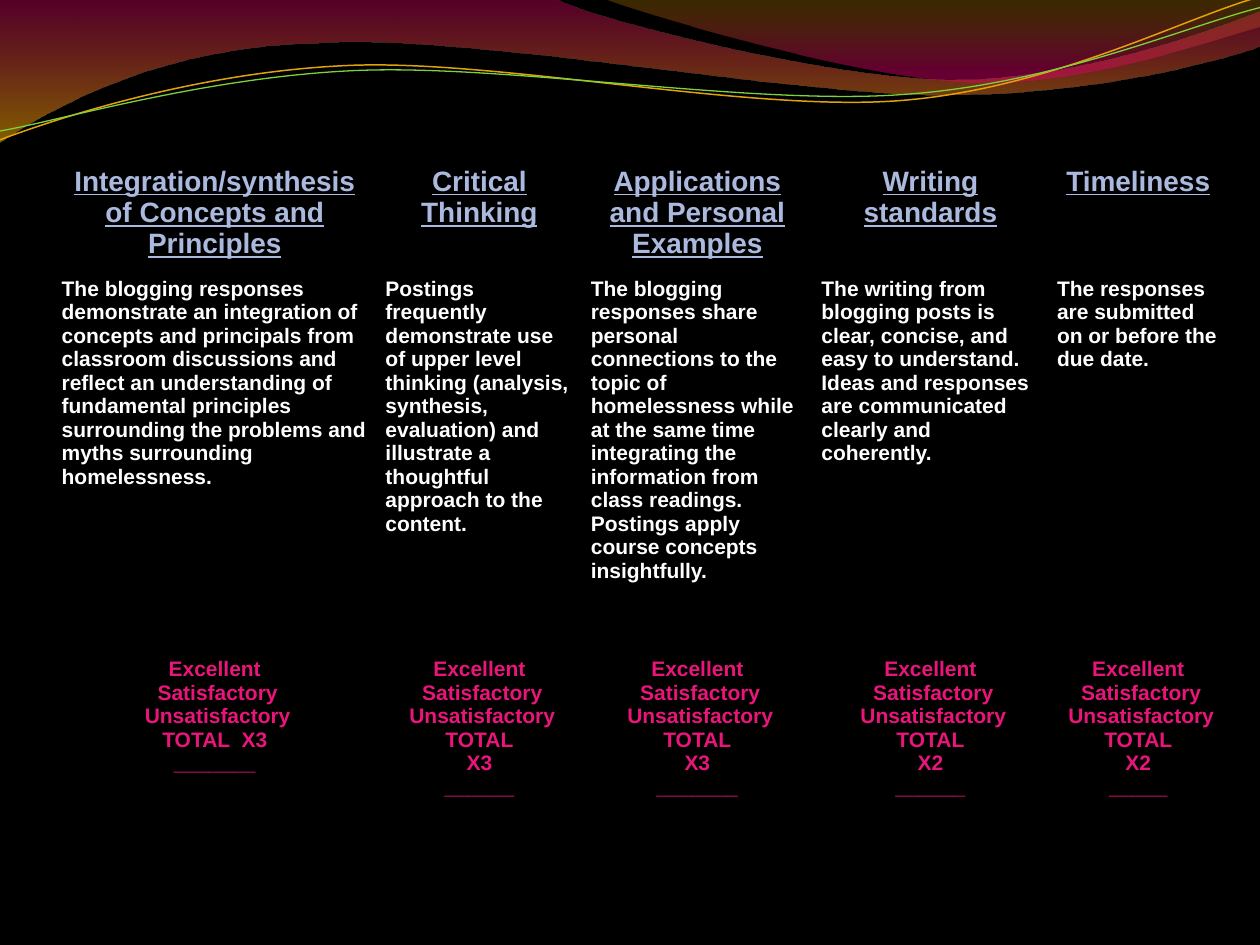
from lxml.etree import SubElement
from pptx import Presentation
from pptx.dml.color import RGBColor
from pptx.enum.text import PP_ALIGN
from pptx.oxml.ns import qn
from pptx.util import Inches, Pt

COLORS = {
    "background": "000000", "heading": "ABB9DE", "body": "FFFFFF", "rating": "EA157A",
    "plum": "BD0059", "amber": "F0AB00", "ochre": "C38B00", "magenta": "E1006B",
    "gold": "E0A209", "green": "7FD13B",
}
NO_GRID_STYLE = "{2D5ABB26-0587-4C30-8999-92F81FD0307C}"
COLUMN_WIDTHS = [2.57, 1.63, 1.83, 1.87, 1.43]
ROW_HEIGHTS = [0.71, 3.02, 2.1]
LEVELS = ["Excellent", " Satisfactory", " Unsatisfactory"]
CRITERIA = [
    ("Integration/synthesis of Concepts and Principles",
     "The blogging responses demonstrate an integration of concepts and principals from "
     "classroom discussions and reflect an understanding of fundamental principles "
     "surrounding the problems and myths surrounding homelessness.",
     ["TOTAL  X3", "_______"]),
    ("Critical Thinking",
     "Postings frequently demonstrate use of upper level thinking (analysis, synthesis, "
     "evaluation) and illustrate a thoughtful approach to the content.",
     ["TOTAL", "X3", "______"]),
    ("Applications and Personal Examples",
     "The blogging responses share personal connections to the topic of homelessness while "
     "at the same time integrating the information from class readings. Postings apply "
     "course concepts insightfully.",
     ["TOTAL", "X3", "_______"]),
    ("Writing standards",
     "The writing from blogging posts is clear, concise, and easy to understand. Ideas and "
     "responses are communicated clearly and coherently.",
     ["TOTAL", "X2", "______"]),
    ("Timeliness",
     "The responses are submitted on or before the due date.",
     ["TOTAL", "X2", "_____"]),
]
WIDE_WAVE = [
    [(0, 0)],
    [(4.4, -0.01)],
    [(4.76, 0.17), (6.64, 0.63), (7.58, 0.63)],
    [(8.53, 0.63), (9.58, 0.26), (10, 0.09)],
    [(10.01, 0.36)],
    [(9.83, 0.44), (8.7, 0.76), (7.46, 0.75)],
    [(6.22, 0.75), (3.82, 0.28), (2.57, 0.34)],
    [(1.29, 0.36), (0.46, 0.83), (-0.01, 1.13)],
    [(0, 0)],
]
RIGHT_WAVE = [
    [(4.79, -0.01)],
    [(5.09, 0.11), (6.82, 0.62), (7.69, 0.65)],
    [(8.56, 0.69), (9.61, 0.32), (10, 0.21)],
    [(10, 0)],
    [(4.79, -0.01)],
]
GOLD_STRAND = [
    [(0, 1.11)],
    [(0.48, 0.93), (1.58, 0.57), (2.77, 0.52)],
    [(3.95, 0.47), (5.93, 0.89), (7.13, 0.8)],
    [(8.33, 0.71), (9.38, 0.15), (9.98, -0.02)],
]
GREEN_STRAND = [
    [(0, 1.04)],
    [(0.47, 0.96), (1.64, 0.61), (2.83, 0.56)],
    [(4.03, 0.51), (5.97, 0.84), (7.17, 0.75)],
    [(8.36, 0.67), (9.41, 0.21), (10, 0.06)],
]


def color(name):
    """Return the named palette colour."""
    return RGBColor.from_string(COLORS[name])


def add_outline(slide, left, top, segments, close):
    """Draw lines (one point) and cubic curves (three points) from the given corner."""
    placed = [(left + Inches(x), top + Inches(y)) for points in segments for x, y in points]
    builder = slide.shapes.build_freeform(*placed[0])
    builder.add_line_segments(placed[1:], close=close)
    outline = builder.convert_to_shape()
    outline.shadow.inherit = False
    lines = iter(list(outline.element.iter(qn("a:lnTo"))))
    for points in segments[1:]:
        parts = [next(lines) for _ in points]
        if len(parts) == 3:
            curve = parts[0].makeelement(qn("a:cubicBezTo"))
            parts[0].addprevious(curve)
            for part in parts:
                curve.append(part[0])
                part.getparent().remove(part)
    return outline


def add_wave(slide, left, top, segments, stops):
    """Add a translucent wave; each stop is position, colour and opacity percent."""
    wave = add_outline(slide, left, top, segments, True)
    wave.line.fill.background()
    wave.fill.gradient()
    wave.fill.gradient_angle = 270
    for stop, (position, name, _) in zip(wave.fill.gradient_stops, stops):
        stop.position = position
        stop.color.rgb = color(name)
    stop_colors = wave.element.spPr.iter(qn("a:srgbClr"))
    for stop_color, (_, _, opacity) in zip(stop_colors, stops):
        SubElement(stop_color, qn("a:alpha")).set("val", str(opacity * 1000))


def add_strand(slide, left, top, segments, name, weight):
    """Add a thin open curve."""
    strand = add_outline(slide, left, top, segments, False)
    strand.fill.background()
    strand.line.color.rgb = color(name)
    strand.line.width = Pt(weight)


def add_header_waves(slide, left, top):
    """Draw the decorative band along the top of the slide."""
    add_wave(slide, left, top, WIDE_WAVE, [(0, "plum", 45), (1, "amber", 55)])
    add_wave(slide, left, top, RIGHT_WAVE, [(0, "ochre", 30), (0.8, "magenta", 45)])
    add_strand(slide, left, top, GOLD_STRAND, "gold", 0.85)
    add_strand(slide, left, top, GREEN_STRAND, "green", 0.75)


def write_cell(cell, lines, *, name, size=12, align=PP_ALIGN.LEFT, underline=False):
    """Write formatted lines into a clear table cell."""
    cell.fill.background()
    cell.margin_left = cell.margin_right = Inches(0.07)
    cell.margin_top = cell.margin_bottom = Inches(0.07)
    cell.text = "\n".join(lines)
    for paragraph in cell.text_frame.paragraphs:
        paragraph.alignment = align
        font = paragraph.runs[0].font
        font.name = "Arial"
        font.size = Pt(size)
        font.bold = True
        font.underline = underline
        font.color.rgb = color(name)


def add_rubric(slide, left, top, width, height):
    """Add the grading table with one column for each criterion."""
    frame = slide.shapes.add_table(len(ROW_HEIGHTS), len(CRITERIA), left, top, width, height)
    rubric = frame.table
    rubric.first_row = rubric.horz_banding = False
    frame.element.find(".//" + qn("a:tableStyleId")).text = NO_GRID_STYLE
    for column, column_width in zip(rubric.columns, COLUMN_WIDTHS):
        column.width = Inches(column_width)
    for row, row_height in zip(rubric.rows, ROW_HEIGHTS):
        row.height = Inches(row_height)
    for index, (heading, description, total) in enumerate(CRITERIA):
        write_cell(rubric.cell(0, index), [heading], name="heading", size=16,
                   align=PP_ALIGN.CENTER, underline=True)
        write_cell(rubric.cell(1, index), [description], name="body")
        write_cell(rubric.cell(2, index), LEVELS + total, name="rating",
                   align=PP_ALIGN.CENTER)


def main():
    """Build and save the rubric slide."""
    deck = Presentation()
    deck.slide_width, deck.slide_height = Inches(10), Inches(7.5)
    slide = deck.slides.add_slide(deck.slide_layouts[6])
    slide.background.fill.solid()
    slide.background.fill.fore_color.rgb = color("background")
    add_header_waves(slide, Inches(0), Inches(0))
    add_rubric(slide, Inches(0.42), Inches(1.25), Inches(9.33), Inches(6.07))
    deck.save("out.pptx")


if __name__ == "__main__":
    main()
